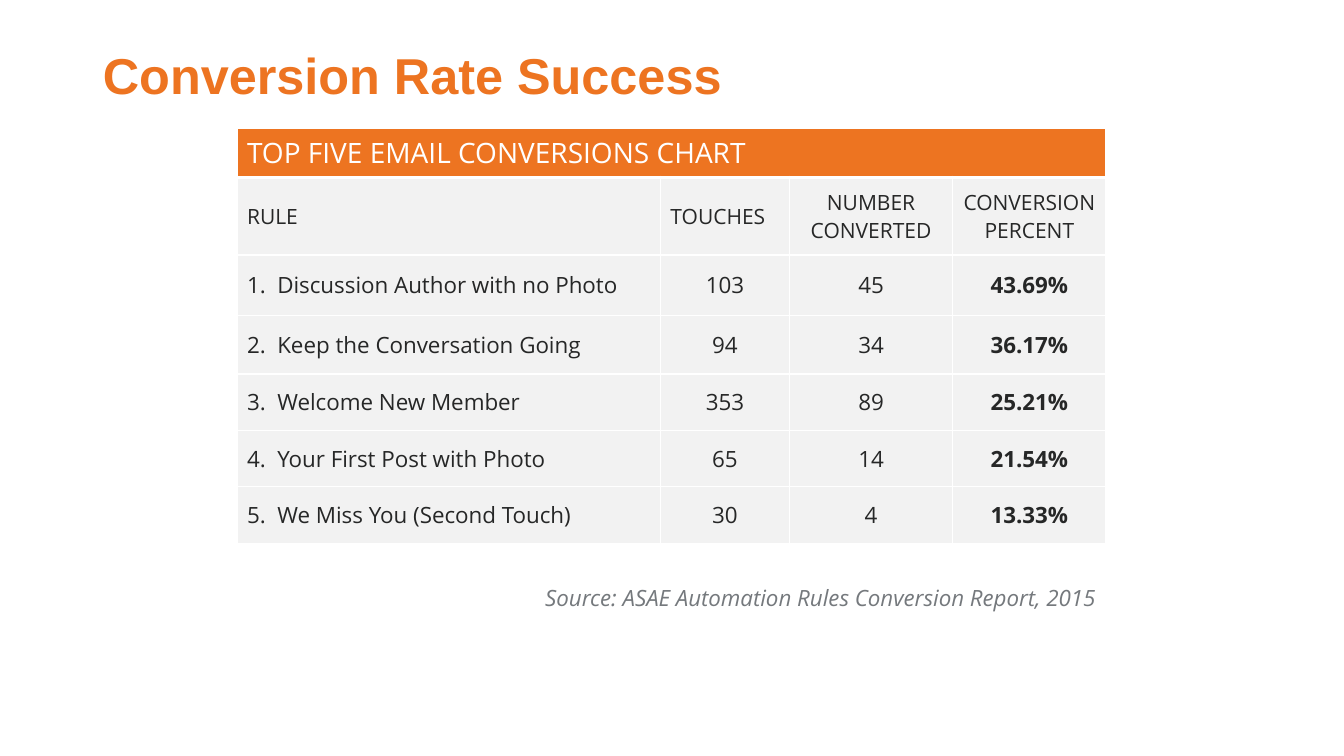
from dataclasses import dataclass

from lxml.etree import SubElement
from pptx import Presentation
from pptx.dml.color import RGBColor
from pptx.enum.text import MSO_ANCHOR as Anchor, PP_ALIGN as Align
from pptx.oxml.ns import qn
from pptx.util import Inches, Pt

TITLE = "Conversion Rate Success"
BANNER = "TOP FIVE EMAIL CONVERSIONS CHART"
HEADINGS = ("RULE", "TOUCHES", "NUMBER CONVERTED", "CONVERSION PERCENT")
RULES = [
    ("1.  Discussion Author with no Photo", "103", "45", "43.69%"),
    ("2.  Keep the Conversation Going", "94", "34", "36.17%"),
    ("3.  Welcome New Member", "353", "89", "25.21%"),
    ("4.  Your First Post with Photo", "65", "14", "21.54%"),
    ("5.  We Miss You (Second Touch)", "30", "4", "13.33%"),
]
SOURCE = "Source: ASAE Automation Rules Conversion Report, 2015"
COL_WIDTHS = (4.2, 1.28, 1.62, 1.52)
ROW_HEIGHTS = (0.49, 0.55, 0.6, 0.58, 0.56, 0.56, 0.56, 0.94)


@dataclass(frozen=True)
class Theme:
    orange: str = "ED7421"
    white: str = "FFFFFF"
    panel: str = "F2F2F2"
    ink: str = "262727"
    muted: str = "75797D"
    title_font: str = "Arial"
    body_font: str = "Open Sans"
    title_size: int = 36
    banner_size: int = 20
    heading_size: int = 15
    body_size: int = 16


T = Theme()


def write(tf, text, *, size=T.body_size, color=T.ink, font=T.body_font,
          bold=False, italic=False, align=Align.LEFT, spacing=None):
    p = tf.paragraphs[0]
    p.alignment = align
    p.line_spacing = spacing
    r = p.add_run()
    r.text = text
    r.font.name = font
    r.font.size = Pt(size)
    r.font.bold = bold
    r.font.italic = italic
    r.font.color.rgb = RGBColor.from_string(color)


def style_cell(cell, fill, bottom=1):
    tc_pr = cell._tc.get_or_add_tcPr()
    for side, width in (("L", 1), ("R", 1), ("T", 1), ("B", bottom)):
        ln = SubElement(tc_pr, qn(f"a:ln{side}"), w=str(Pt(width)))
        SubElement(SubElement(ln, qn("a:solidFill")), qn("a:srgbClr"), val=T.white)
    cell.fill.solid()
    cell.fill.fore_color.rgb = RGBColor.from_string(fill)


def add_title(slide):
    s = slide.shapes.title
    s.left, s.top, s.width, s.height = map(Inches, (0.92, 0.43, 11.5, 0.69))
    s.text_frame.vertical_anchor = Anchor.MIDDLE
    write(s.text_frame, TITLE, size=T.title_size, color=T.orange,
          font=T.title_font, bold=True, spacing=0.9)


def add_conversions(slide):
    rows, cols = len(ROW_HEIGHTS), len(COL_WIDTHS)
    table = slide.shapes.add_table(
        rows, cols, Inches(2.35), Inches(1.27),
        Inches(sum(COL_WIDTHS)), Inches(sum(ROW_HEIGHTS))).table
    table.first_row = table.horz_banding = False
    for col, width in zip(table.columns, COL_WIDTHS):
        col.width = Inches(width)
    for row, height in zip(table.rows, ROW_HEIGHTS):
        row.height = Inches(height)

    for i, values in enumerate([HEADINGS, *RULES], start=1):
        heading = i == 1
        left_cols = 2 if heading else 1
        for j, value in enumerate(values):
            cell = table.cell(i, j)
            style_cell(cell, T.panel)
            cell.vertical_anchor = Anchor.MIDDLE
            cell.margin_top = cell.margin_bottom = Inches(0.1)
            write(cell.text_frame, value,
                  size=T.heading_size if heading else T.body_size,
                  bold=not heading and j == cols - 1,
                  align=Align.LEFT if j < left_cols else Align.CENTER)

    for i, fill, bottom in ((0, T.orange, 3), (rows - 1, T.white, 1)):
        table.cell(i, 0).merge(table.cell(i, cols - 1))
        for j in range(cols):
            style_cell(table.cell(i, j), fill, bottom)

    banner, source = table.cell(0, 0), table.cell(rows - 1, 0)
    banner.vertical_anchor = Anchor.MIDDLE
    write(banner.text_frame, BANNER, size=T.banner_size, color=T.white)
    source.margin_top = Inches(0.39)
    write(source.text_frame, SOURCE, color=T.muted, italic=True, align=Align.RIGHT)


def main():
    prs = Presentation()
    prs.slide_width, prs.slide_height = Inches(13.33), Inches(7.5)
    slide = prs.slides.add_slide(prs.slide_layouts[5])
    add_title(slide)
    add_conversions(slide)
    prs.save("out.pptx")


if __name__ == "__main__":
    main()
